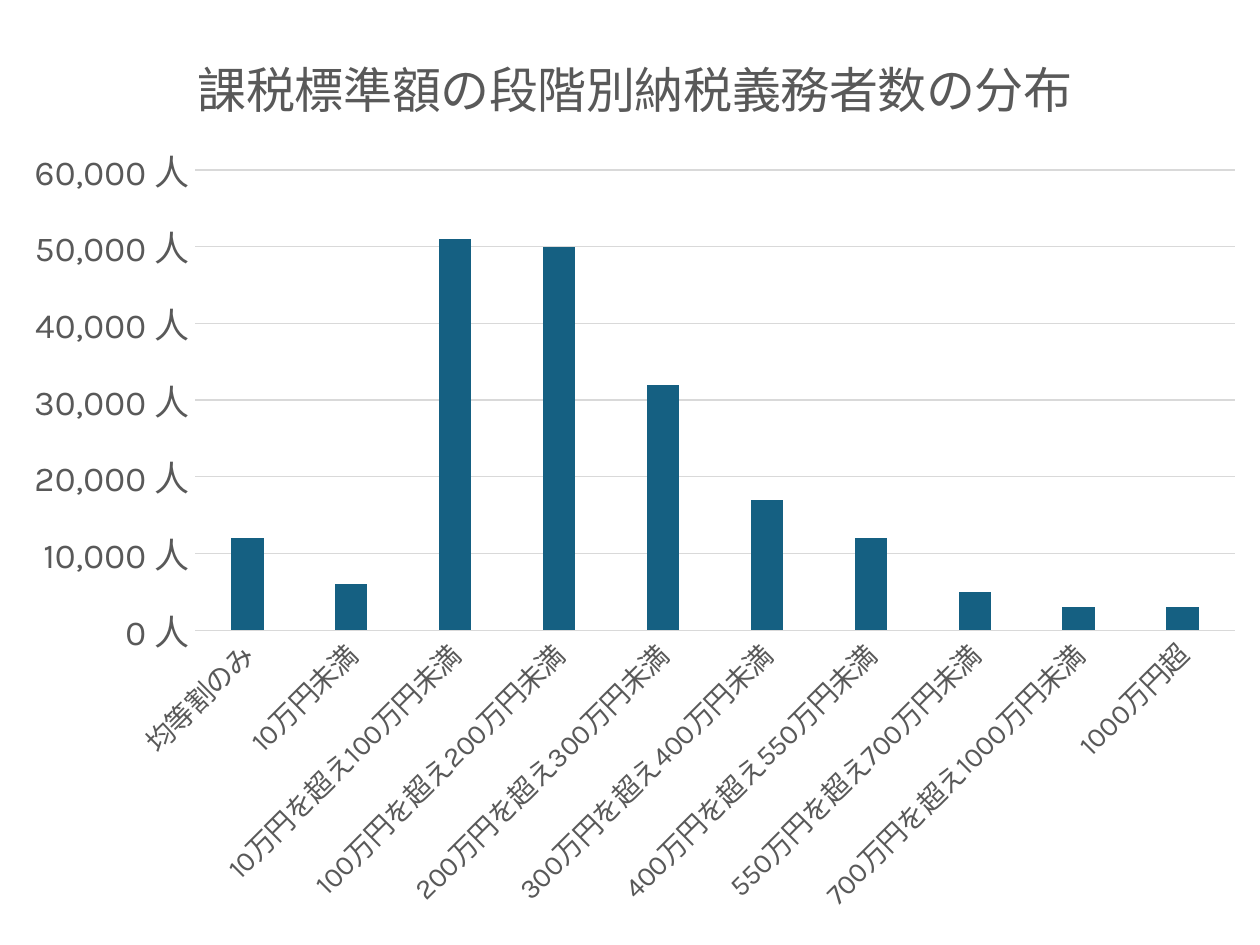
import dataclasses
import typing

import pptx
import pptx.chart.data
import pptx.dml.color
import pptx.enum.chart
import pptx.oxml
import pptx.oxml.ns
import pptx.util


@dataclasses.dataclass(frozen=True)
class Theme:
    font: str = "Karla"
    text: str = "595959"
    rule: str = "D9D9D9"
    bar: str = "156082"
    base_size: int = 10
    title_size: int = 28
    category_size: int = 16
    value_size: int = 20
    rule_width: float = 0.75


class Bracket(typing.NamedTuple):
    label: str
    taxpayers: int


THEME = Theme()
TITLE = "課税標準額の段階別納税義務者数の分布"
BRACKETS = [
    Bracket("均等割のみ", 12000),
    Bracket("10万円未満", 6000),
    Bracket("10万円を超え100万円未満", 51000),
    Bracket("100万円を超え200万円未満", 50000),
    Bracket("200万円を超え300万円未満", 32000),
    Bracket("300万円を超え400万円未満", 17000),
    Bracket("400万円を超え550万円未満", 12000),
    Bracket("550万円を超え700万円未満", 5000),
    Bracket("700万円を超え1000万円未満", 3000),
    Bracket("1000万円超", 3000),
]


def apply(target: typing.Any, values: dict[str, typing.Any]) -> None:
    for name, value in values.items():
        setattr(target, name, value)


def color(value: str) -> pptx.dml.color.RGBColor:
    return pptx.dml.color.RGBColor.from_string(value)


def style_font(font: typing.Any, size: int) -> None:
    apply(font, {"name": THEME.font, "size": pptx.util.Pt(size), "bold": False})
    font.color.rgb = color(THEME.text)


def style_line(line: typing.Any) -> None:
    line.color.rgb = color(THEME.rule)
    line.width = pptx.util.Pt(THEME.rule_width)


def set_layout(parent: typing.Any, before: str, fields: dict[str, typing.Any]) -> None:
    for old in parent.findall(pptx.oxml.ns.qn("c:layout")):
        parent.remove(old)
    items = "".join(f'<c:{name} val="{value}"/>' for name, value in fields.items())
    layout = pptx.oxml.parse_xml(
        f'<c:layout {pptx.oxml.ns.nsdecls("c")}>'
        f"<c:manualLayout>{items}</c:manualLayout></c:layout>"
    )
    parent.find(pptx.oxml.ns.qn(before)).addprevious(layout)


def add_title(chart: typing.Any) -> None:
    chart.has_title = True
    title = chart.chart_title
    title.include_in_layout = False
    p = title.text_frame.paragraphs[0]
    r = p.add_run()
    r.text = TITLE
    style_font(r.font, THEME.title_size)
    set_layout(
        title._element,
        "c:overlay",
        {"xMode": "edge", "yMode": "edge", "x": 0.15, "y": 0.04},
    )


def style_axes(chart: typing.Any) -> None:
    none = pptx.enum.chart.XL_TICK_MARK.NONE
    sizes = (
        (chart.category_axis, THEME.category_size),
        (chart.value_axis, THEME.value_size),
    )
    for axis, size in sizes:
        apply(axis, {"major_tick_mark": none, "minor_tick_mark": none})
        style_font(axis.tick_labels.font, size)
    cat, val = chart.category_axis, chart.value_axis
    style_line(cat.format.line)
    body = cat._element.find(
        f'{pptx.oxml.ns.qn("c:txPr")}/{pptx.oxml.ns.qn("a:bodyPr")}'
    )
    body.set("rot", "-2700000")
    body.set("vert", "horz")
    apply(
        val,
        {
            "minimum_scale": 0,
            "maximum_scale": 60000,
            "major_unit": 10000,
            "has_major_gridlines": True,
        },
    )
    val.format.line.fill.background()
    style_line(val.major_gridlines.format.line)
    apply(
        val.tick_labels,
        {"number_format": '#,##0_ "人"', "number_format_is_linked": False},
    )


def add_bar_chart(s: typing.Any, width: int, height: int) -> None:
    data = pptx.chart.data.CategoryChartData()
    data.categories = [b.label for b in BRACKETS]
    data.add_series("Series 1", [b.taxpayers for b in BRACKETS])
    kind = pptx.enum.chart.XL_CHART_TYPE.COLUMN_CLUSTERED
    chart = s.shapes.add_chart(kind, 0, 0, width, height, data).chart
    chart.has_legend = False
    apply(
        chart.font, {"name": THEME.font, "size": pptx.util.Pt(THEME.base_size)}
    )
    plot = chart.plots[0]
    apply(plot, {"gap_width": 219, "overlap": -27, "vary_by_categories": False})
    fill = plot.series[0].format.fill
    fill.solid()
    fill.fore_color.rgb = color(THEME.bar)
    add_title(chart)
    style_axes(chart)
    set_layout(
        chart._chartSpace.chart.plotArea,
        "c:barChart",
        {
            "layoutTarget": "inner",
            "xMode": "edge",
            "yMode": "edge",
            "x": 0.155,
            "y": 0.18,
            "w": 0.825,
            "h": 0.487,
        },
    )


def main() -> None:
    prs = pptx.Presentation()
    size = {
        "slide_width": pptx.util.Inches(10),
        "slide_height": pptx.util.Inches(7.5),
    }
    apply(prs, size)
    s = prs.slides.add_slide(prs.slide_layouts[6])
    add_bar_chart(s, prs.slide_width, prs.slide_height)
    prs.save("out.pptx")


if __name__ == "__main__":
    main()
